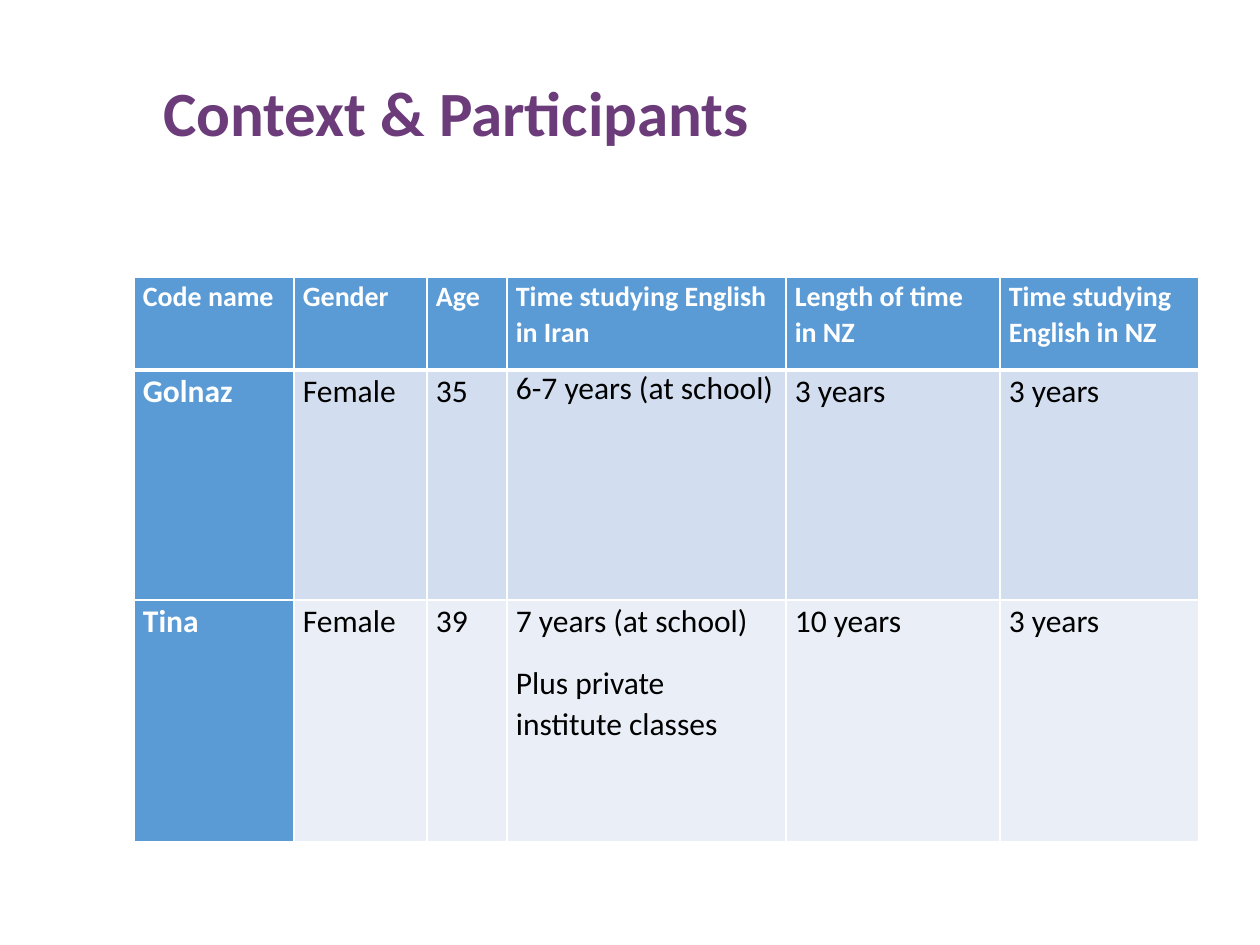
import pptx
import pptx.dml.color
import pptx.enum.text
import pptx.oxml
import pptx.oxml.ns
import pptx.util

RGBColor = pptx.dml.color.RGBColor
PURPLE = RGBColor(0x6C, 0x3B, 0x7A)
BLUE = RGBColor(0x5B, 0x9B, 0xD5)
BAND_DARK = RGBColor(0xD2, 0xDE, 0xEF)
BAND_LIGHT = RGBColor(0xEA, 0xEF, 0xF7)
WHITE = RGBColor(0xFF, 0xFF, 0xFF)
BLACK = RGBColor(0, 0, 0)

PX_PER_INCH = 126
COLUMNS = [160, 133, 80, 279, 214, 199]
ROWS = [93, 230, 242]
PARTICIPANTS = [
    ["Code name", "Gender", "Age", "Time studying English in Iran",
     "Length of time in NZ", "Time studying English in NZ"],
    ["Golnaz", "Female", "35", "6-7 years (at school)", "3 years", "3 years"],
    ["Tina", "Female", "39", "7 years (at school)\nPlus private institute classes",
     "10 years", "3 years"],
]


def px(n):
    return pptx.util.Emu(round(n * 914400 / PX_PER_INCH))


class Deck:
    font = "Calibri"

    def __init__(self, prs):
        self.s = prs.slides.add_slide(prs.slide_layouts[6])

    def text(self, tf, text, size, color, bold, spacing, gap=0):
        """Fill a text frame, one paragraph per line of text."""
        tf.word_wrap = True
        for i, line in enumerate(text.split("\n")):
            p = tf.add_paragraph() if i else tf.paragraphs[0]
            p.text = line
            p.line_spacing = spacing
            p.space_before = pptx.util.Pt(gap if i else 0)
            p.space_after = pptx.util.Pt(gap)
            p.font.name = self.font
            p.font.size = pptx.util.Pt(size)
            p.font.bold = bold
            p.font.color.rgb = color

    def title(self, text, x, y, w, h):
        tf = self.s.shapes.add_textbox(px(x), px(y), px(w), px(h)).text_frame
        tf.vertical_anchor = pptx.enum.text.MSO_ANCHOR.MIDDLE
        self.text(tf, text, 36, PURPLE, True, 0.9)

    def borders(self, cell, top, bottom):
        tc_pr = cell._tc.get_or_add_tcPr()
        for side, pt in (("L", 1), ("R", 1), ("T", top), ("B", bottom)):
            tc_pr.append(pptx.oxml.parse_xml(
                f'<a:ln{side} {pptx.oxml.ns.nsdecls("a")} w="{pptx.util.Pt(pt)}">'
                f'<a:solidFill><a:srgbClr val="{WHITE}"/></a:solidFill></a:ln{side}>'))

    def cell(self, cell, text, row, col):
        is_header = row == 0
        is_label = is_header or col == 0
        cell.margin_left = cell.margin_right = px(9)
        cell.margin_top = cell.margin_bottom = 0
        # A thicker rule separates the header from the body
        self.borders(cell, top=3 if row == 1 else 1, bottom=3 if is_header else 1)
        cell.fill.solid()
        band = BAND_DARK if row % 2 else BAND_LIGHT
        cell.fill.fore_color.rgb = BLUE if is_label else band
        single_spaced = (row, col) == (1, 3)
        self.text(cell.text_frame, text, 16 if is_header else 18,
                  WHITE if is_label else BLACK, is_label,
                  1.0 if single_spaced else 1.07, 0 if is_header else 6)

    def table(self, data, x, y, widths, heights):
        table = self.s.shapes.add_table(
            len(heights), len(widths), px(x), px(y),
            px(sum(widths)), px(sum(heights))).table
        table.first_col = True
        for column, width in zip(table.columns, widths):
            column.width = px(width)
        for r, (row, height) in enumerate(zip(table.rows, heights)):
            row.height = px(height)
            for c, text in enumerate(data[r]):
                self.cell(table.cell(r, c), text, r, c)


def main():
    prs = pptx.Presentation()
    prs.slide_width, prs.slide_height = px(1260), px(945)
    deck = Deck(prs)

    # Heading
    deck.title("Context & Participants", 151, 0, 1086, 233)

    # Participant details
    deck.table(PARTICIPANTS, 134, 277, COLUMNS, ROWS)

    prs.save("out.pptx")


if __name__ == "__main__":
    main()
